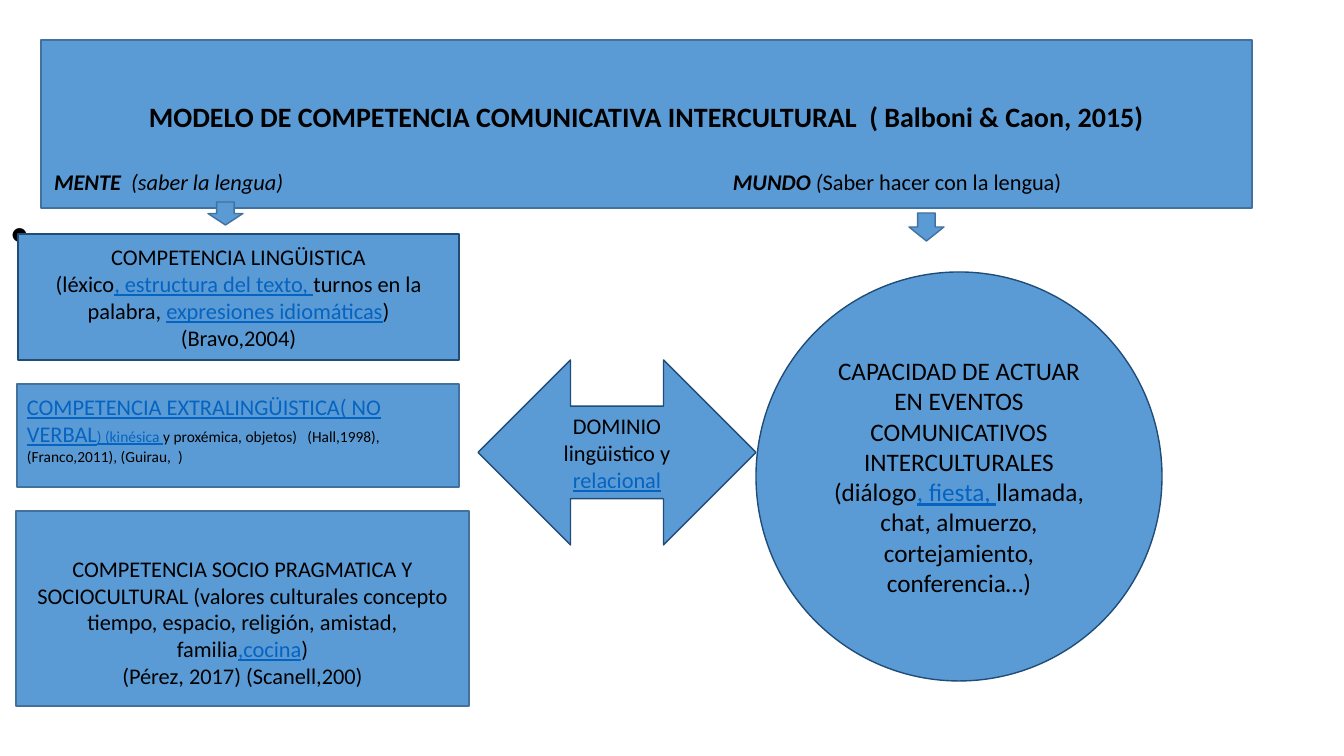
from pptx import Presentation
from pptx import util as u
from pptx.dml.color import RGBColor
from pptx.enum import shapes, text

HUE = {"fill": "5B9BD5", "dark": "1F4D78", "mid": "41719C",
       "ink": "000000", "link": "0563C1"}
KIND = shapes.MSO_SHAPE
MID, LEFT = text.PP_ALIGN.CENTER, text.PP_ALIGN.LEFT


def px(n):
    return u.Emu(round(n * 914400 / 100.8))


def write(shape, paras, size, align=MID, pads=(10, 5, 10, 5)):
    """Fill a shape with paragraphs of (text, flags) runs.

    Flags: b bold, i italic, l link colour and underline, s small.
    """
    frame = shape.text_frame
    frame.word_wrap = True
    frame.vertical_anchor = text.MSO_ANCHOR.MIDDLE
    (frame.margin_left, frame.margin_top,
     frame.margin_right, frame.margin_bottom) = map(px, pads)
    for i, runs in enumerate(paras):
        para = frame.add_paragraph() if i else frame.paragraphs[0]
        para.alignment = align
        para.font.name = "Calibri"
        para.font.size = u.Pt(size)
        para.font.color.rgb = RGBColor.from_string(HUE["ink"])
        for words, flags in runs:
            run = para.add_run()
            run.text = words
            if "b" in flags:
                run.font.bold = True
            if "i" in flags:
                run.font.italic = True
            if "s" in flags:
                run.font.size = u.Pt(11)
            if "l" in flags:
                run.font.underline = True
                run.font.color.rgb = RGBColor.from_string(HUE["link"])


deck = Presentation()
deck.slide_width, deck.slide_height = px(1344), px(756)
slide = deck.slides.add_slide(deck.slide_layouts[6])

# Bullet beside the first competence
dot = slide.shapes.add_textbox(px(10), px(207), px(30), px(48))
write(dot, [[("•", "")]], 28, LEFT, (0, 0, 0, 0))

# Shapes, back to front: name, kind, box, line
parts = {}
for name, kind, box, line in [
    ("title", KIND.RECTANGLE, (41, 40, 1211, 168), "mid"),
    ("domain", KIND.LEFT_RIGHT_ARROW, (478, 360, 278, 185), "dark"),
    ("events", KIND.OVAL, (756, 272, 406, 409), "dark"),
    ("language", KIND.RECTANGLE, (18, 234, 441, 126), "dark"),
    ("nonverbal", KIND.RECTANGLE, (17, 384, 442, 103), "mid"),
    ("culture", KIND.RECTANGLE, (16, 511, 453, 195), "mid"),
    ("mind", KIND.DOWN_ARROW, (208, 202, 35, 23), "mid"),
    ("world", KIND.DOWN_ARROW, (909, 213, 35, 28), "mid"),
]:
    part = slide.shapes.add_shape(kind, *map(px, box))
    part.shadow.inherit = False
    part.fill.solid()
    part.fill.fore_color.rgb = RGBColor.from_string(HUE["fill"])
    part.line.color.rgb = RGBColor.from_string(HUE[line])
    part.line.width = u.Pt(1)
    parts[name] = part

# Title and its two headings
write(parts["title"], [[
    ("MODELO DE COMPETENCIA COMUNICATIVA INTERCULTURAL  ( Balboni & Caon, 2015)", "b"),
]], 20, pads=(10, 5, 10, 21))
for left, runs in [
    (54, [("MENTE", "bi"), ("  (saber la lengua)", "i")]),
    (733, [("MUNDO", "bi"), (" (", "i"), ("Saber hacer con la lengua)", "")]),
]:
    head = slide.shapes.add_textbox(px(left), px(167), px(400), px(30))
    write(head, [runs], 16, LEFT, (0, 0, 0, 0))

# Competences on the left
write(parts["language"], [
    [("COMPETENCIA LINGÜISTICA", "")],
    [("(léxico", ""), (", estructura del texto, ", "l"),
     ("turnos en la palabra, ", ""), ("expresiones idiomáticas", "l"),
     (") (Bravo,2004)", "")],
], 16)
write(parts["nonverbal"], [[
    ("COMPETENCIA EXTRALINGÜISTICA( NO VERBAL", "l"),
    (") (kinésica ", "ls"),
    ("y proxémica, objetos)   (Hall,1998), (Franco,2011), (Guirau,  )", "s"),
]], 16, LEFT, (10, 5, 10, 17))
write(parts["culture"], [
    [("COMPETENCIA SOCIO PRAGMATICA Y SOCIOCULTURAL (valores culturales "
      "concepto tiempo, espacio, religión, amistad, familia", ""),
     (",cocina", "l"), (")", "")],
    [("(Pérez, 2017) (Scanell,200)", "")],
], 16, pads=(10, 32, 10, 5))

# Link between mind and world
write(parts["domain"], [
    [("DOMINIO lingüistico y ", ""), ("relacional", "l")],
], 16)
write(parts["events"], [
    [("CAPACIDAD DE ACTUAR EN EVENTOS COMUNICATIVOS INTERCULTURALES", "")],
    [("(diálogo", ""), (", fiesta, ", "l"),
     ("llamada, chat, almuerzo, cortejamiento, conferencia…)", "")],
], 18)

deck.save("out.pptx")
